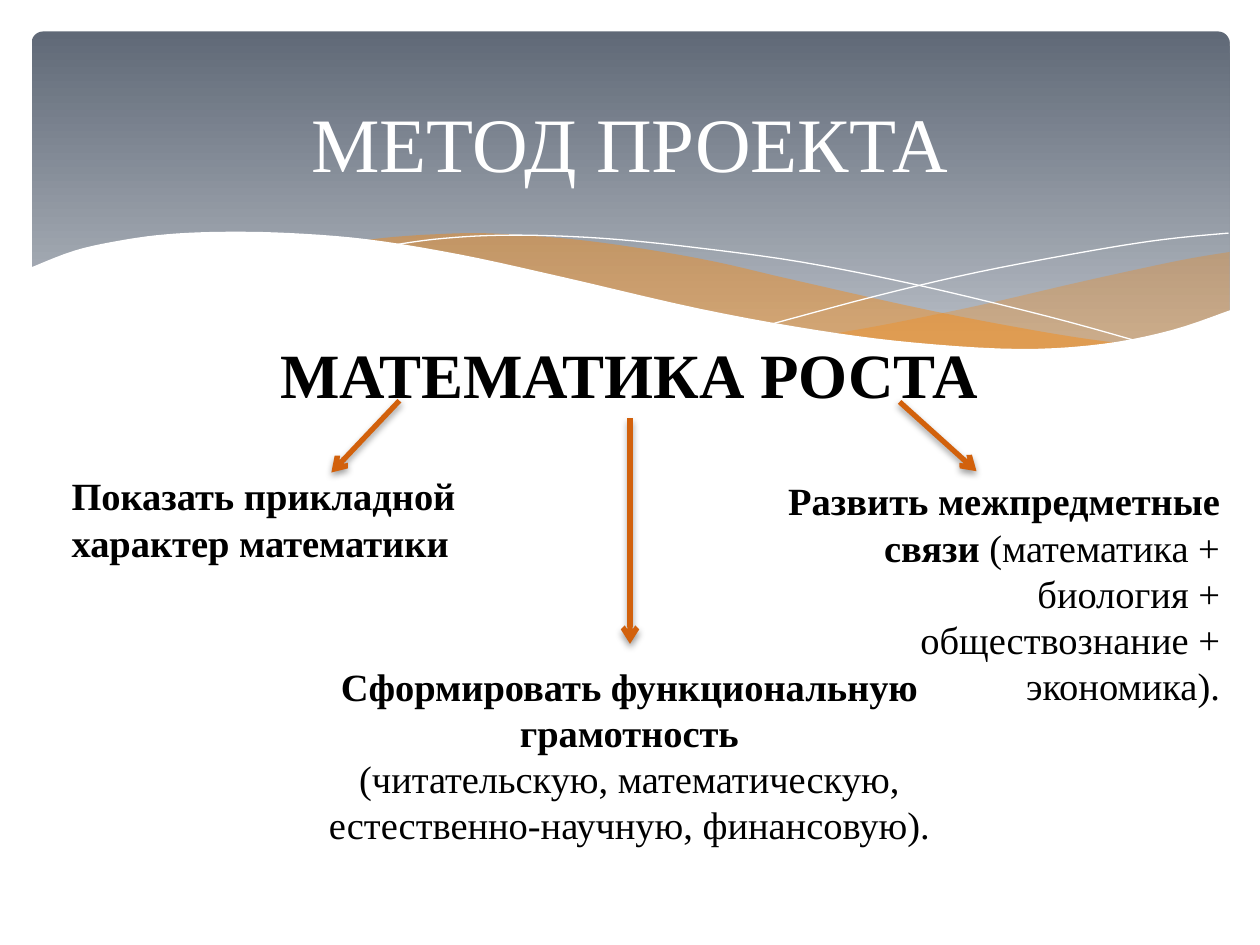
from dataclasses import dataclass

from lxml import etree
from pptx import Presentation
from pptx.dml.color import RGBColor
from pptx.enum.shapes import MSO_CONNECTOR, MSO_SHAPE
from pptx.enum.text import MSO_ANCHOR, PP_ALIGN
from pptx.oxml import parse_xml
from pptx.oxml.ns import nsdecls, qn
from pptx.util import Inches, Pt

Point = tuple[float, float]
Run = tuple[str, bool]  # wording, bold

FONT = "Times New Roman"
COLORS = {
    "banner_top": "606977",
    "banner_bottom": "B5BBC3",
    "orange": "FF8600",
    "arrow": "D2610C",
    "white": "FFFFFF",
    "black": "000000",
}


@dataclass
class Wave:
    """A smooth curve through knots, closed by straight-sided corners if filled."""
    knots: list[list[Point]]
    fill: str = ""
    alpha: int = 100


@dataclass
class Label:
    box: tuple[float, float, float, float]
    paragraphs: list[list[Run]]
    align: PP_ALIGN
    size: int = 22
    color: str = "black"
    wrap: bool = True
    anchor: MSO_ANCHOR = MSO_ANCHOR.TOP


@dataclass
class Arrow:
    start: Point
    end: Point


# Each inner list is one smooth stretch; stretches meet in corners
WAVES = [
    Wave([[(9.76, 2), (9.35, 2.07), (8.61, 2.23), (7.79, 2.42), (7.06, 2.57), (6.61, 2.65)],
          [(6.61, 2.65), (7.19, 2.72), (7.69, 2.77), (8.14, 2.78), (8.63, 2.75),
           (9.05, 2.69), (9.42, 2.59), (9.76, 2.47)]], "orange", 29),
    Wave([[(8.93, 2.73), (8.37, 2.65), (7.41, 2.47), (6.29, 2.22), (5.69, 2.08), (5.14, 1.98),
           (4.65, 1.91), (4.2, 1.87), (3.8, 1.85), (3.44, 1.86), (3.13, 1.88), (2.86, 1.91)],
          [(2.86, 1.91), (3.42, 1.99), (4.04, 2.11), (4.91, 2.32), (5.66, 2.48), (6.34, 2.61),
           (6.95, 2.7), (7.48, 2.76), (7.96, 2.78), (8.48, 2.77), (8.93, 2.73)]], "orange", 40),
    Wave([[(3.09, 1.95), (3.44, 1.9), (3.87, 1.87), (4.33, 1.87), (4.89, 1.9), (5.56, 1.97),
           (6.36, 2.08), (7.27, 2.26), (8.31, 2.51), (9.07, 2.72)]]),
    Wave([[(6.13, 2.57), (6.95, 2.35), (7.76, 2.16), (8.66, 1.99), (9.24, 1.9), (9.75, 1.85)]]),
    Wave([[(9.77, 2.46), (9.3, 2.62), (8.75, 2.73), (8.09, 2.77), (7.26, 2.72), (6.48, 2.62),
           (5.55, 2.45), (4.47, 2.2), (3.65, 2.02), (2.92, 1.9), (2.3, 1.85), (1.77, 1.84),
           (1.32, 1.86), (0.95, 1.91), (0.59, 1.99), (0.23, 2.13)],
          [(0.23, 3.29), (9.77, 3.29)]], "white"),
]

ARROWS = [
    Arrow((3.17, 3.18), (2.63, 3.75)),
    Arrow((5, 3.32), (5, 5.11)),
    Arrow((7.14, 3.19), (7.75, 3.74)),
]

LABELS = [
    Label((0.5, 0.44, 9, 1.37), [[("МЕТОД ПРОЕКТА", False)]], PP_ALIGN.CENTER,
          size=44, color="white", anchor=MSO_ANCHOR.MIDDLE),
    Label((5.99, 3.74, 3.79, 1.95),
          [[("Развить межпредметные связи", True),
            (" (математика + биология + обществознание + экономика).", False)]],
          PP_ALIGN.RIGHT),
    Label((2.32, 5.21, 5.35, 1.58),
          [[("Сформировать функциональную грамотность", True)],
           [("(читательскую, математическую,", False)],
           [("естественно-научную, финансовую).", False)]],
          PP_ALIGN.CENTER),
    Label((0.47, 3.7, 3.76, 0.84),
          [[("Показать прикладной", True)], [("характер математики", True)]], PP_ALIGN.LEFT),
    Label((2.03, 2.61, 5.93, 0.71), [[("МАТЕМАТИКА РОСТА", True)]], PP_ALIGN.CENTER,
          size=36, wrap=False),
]


def rgb(name: str) -> RGBColor:
    return RGBColor.from_string(COLORS[name])


def smooth(knots: list[Point], steps: int = 5) -> list[Point]:
    """Sample a Catmull-Rom curve through the knots."""
    if len(knots) < 3:
        return knots
    padded = [knots[0], *knots, knots[-1]]
    points = [knots[0]]
    for a, b, c, d in zip(padded, padded[1:], padded[2:], padded[3:]):
        for step in range(1, steps + 1):
            t = step / steps
            points.append(tuple(
                0.5 * (2 * q + (r - p) * t + (2 * p - 5 * q + 4 * r - s) * t**2
                       + (3 * q - p - 3 * r + s) * t**3)
                for p, q, r, s in zip(a, b, c, d)))
    return points


def draw_banner(shapes) -> None:
    banner = shapes.add_shape(MSO_SHAPE.ROUNDED_RECTANGLE, Inches(0.25), Inches(0.25),
                              Inches(9.51), Inches(2.7))
    banner.adjustments[0] = 0.034
    banner.shadow.inherit = False
    banner.line.fill.background()
    banner.fill.gradient()
    banner.fill.gradient_angle = 270
    stops = [("banner_top", 0), ("banner_bottom", 0.9)]
    for stop, (color, position) in zip(banner.fill.gradient_stops, stops):
        stop.color.rgb = rgb(color)
        stop.position = position


def draw_wave(shapes, wave: Wave) -> None:
    points = [(Inches(x), Inches(y)) for knots in wave.knots for x, y in smooth(knots)]
    builder = shapes.build_freeform(*points[0])
    builder.add_line_segments(points[1:], close=bool(wave.fill))
    shape = builder.convert_to_shape()
    shape.shadow.inherit = False
    if not wave.fill:
        shape.fill.background()
        shape.line.color.rgb = rgb("white")
        shape.line.width = Pt(0)
        return
    shape.line.fill.background()
    shape.fill.solid()
    shape.fill.fore_color.rgb = rgb(wave.fill)
    if wave.alpha < 100:
        color = shape.fill._xPr.find(f".//{qn('a:srgbClr')}")
        etree.SubElement(color, qn("a:alpha"), val=str(wave.alpha * 1000))


def draw_arrow(shapes, arrow: Arrow) -> None:
    ends = [Inches(v) for v in (*arrow.start, *arrow.end)]
    line = shapes.add_connector(MSO_CONNECTOR.STRAIGHT, *ends)
    line.line.color.rgb = rgb("arrow")
    line.line.width = Pt(3)
    etree.SubElement(line.line._get_or_add_ln(), qn("a:tailEnd"), type="arrow")
    line._element.spPr.append(parse_xml(
        f'<a:effectLst {nsdecls("a")}><a:outerShdw blurRad="{Pt(4)}" dist="{Pt(2)}" '
        f'dir="5400000" rotWithShape="0"><a:srgbClr val="{COLORS["black"]}">'
        '<a:alpha val="38000"/></a:srgbClr></a:outerShdw></a:effectLst>'))


def draw_label(shapes, label: Label) -> None:
    frame = shapes.add_textbox(*map(Inches, label.box)).text_frame
    frame.word_wrap = label.wrap
    frame.vertical_anchor = label.anchor
    for i, runs in enumerate(label.paragraphs):
        paragraph = frame.add_paragraph() if i else frame.paragraphs[0]
        paragraph.alignment = label.align
        for wording, bold in runs:
            run = paragraph.add_run()
            run.text = wording
            run.font.name = FONT
            run.font.size = Pt(label.size)
            run.font.bold = bold
            run.font.color.rgb = rgb(label.color)


def main() -> None:
    deck = Presentation()
    deck.slide_width, deck.slide_height = Inches(10), Inches(7.5)
    shapes = deck.slides.add_slide(deck.slide_layouts[6]).shapes

    # Banner with waves along its lower edge
    draw_banner(shapes)
    for wave in WAVES:
        draw_wave(shapes, wave)

    # Project name leading to its three goals
    for arrow in ARROWS:
        draw_arrow(shapes, arrow)
    for label in LABELS:
        draw_label(shapes, label)

    deck.save("out.pptx")


if __name__ == "__main__":
    main()
